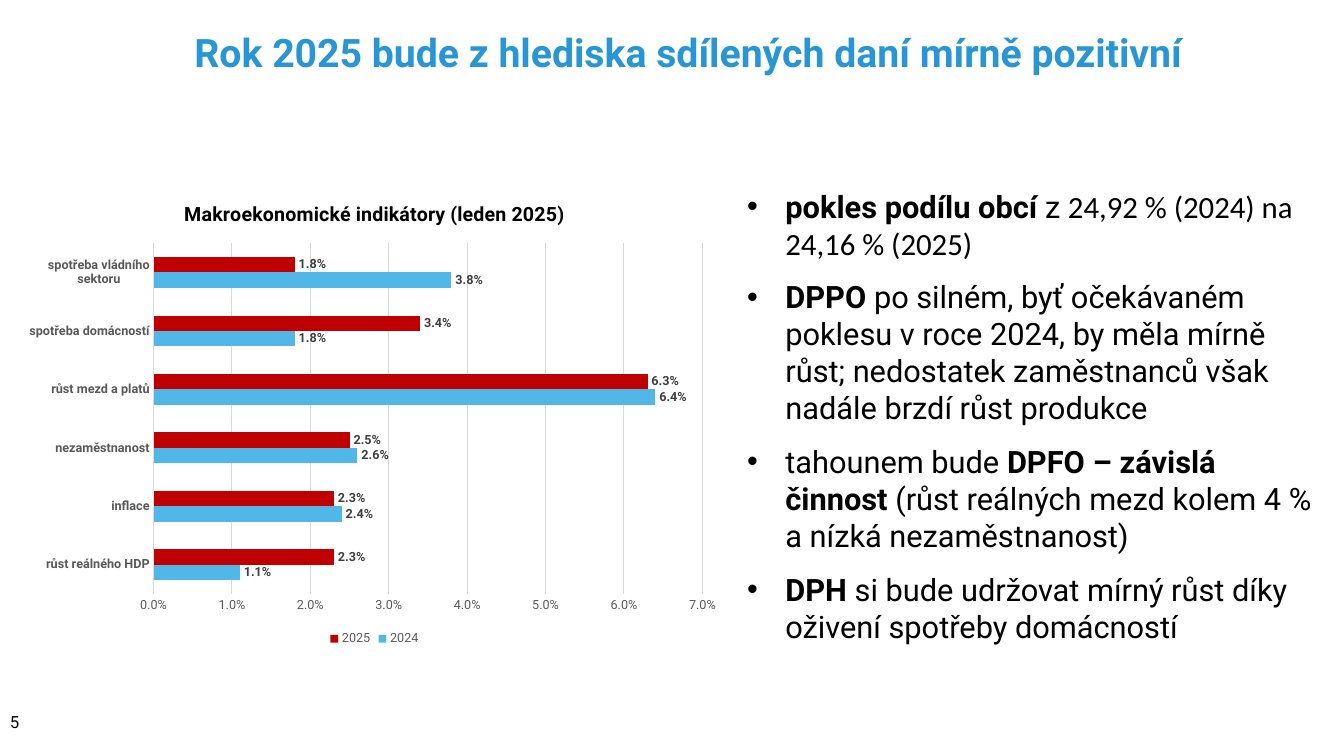
"""Build the slide on shared tax revenue in 2025 with its macroeconomic chart."""
from pptx import Presentation
from pptx.chart.data import CategoryChartData
from pptx.dml.color import RGBColor
from pptx.enum import chart as ch, text
from pptx.oxml import parse_xml
from pptx.oxml.ns import nsdecls
from pptx.util import Inches, Pt


def style(font, **values):
    color = values.pop("color", None)
    for name, value in values.items():
        setattr(font, name, value)
    if color:
        font.color.rgb = RGBColor.from_string(color)


prs = Presentation()
prs.slide_width, prs.slide_height = Inches(13.33), Inches(7.5)
s = prs.slides.add_slide(prs.slide_layouts[1])
title, body = s.placeholders
number = s.shapes.add_textbox(0, 0, 0, 0)

boxes = [
    (title, (0.92, 0.02, 11.81, 0.98), text.MSO_ANCHOR.MIDDLE),
    (body, (6.81, 1.81, 6.39, 4.68), text.MSO_ANCHOR.TOP),
    (number, (0, 6.95, 0.48, 0.43), text.MSO_ANCHOR.MIDDLE),
]
for sp, place, anchor in boxes:
    for name, value in zip(("left", "top", "width", "height"), place):
        setattr(sp, name, Inches(value))
    tf = sp.text_frame
    tf.word_wrap = True
    tf.auto_size = text.MSO_AUTO_SIZE.NONE
    tf.vertical_anchor = anchor
body.text_frame.auto_size = text.MSO_AUTO_SIZE.SHAPE_TO_FIT_TEXT

labels = [
    (title, "Rok 2025 bude z hlediska sdílených daní mírně pozitivní",
     dict(size=Pt(28), bold=True, color="2896D4")),
    (number, "5", dict(size=Pt(12), color="000000")),
]
for sp, words, look in labels:
    r = sp.text_frame.paragraphs[0].add_run()
    r.text = words
    style(r.font, name="Roboto", **look)
title.text_frame.paragraphs[0].alignment = text.PP_ALIGN.CENTER

bullets = [
    [("pokles podílu obcí ", True, "Roboto"), ("z ", False, "Roboto"),
     ("24,92 % (2024) na 24,16 % (2025)", False, "Calibri")],
    [("DPPO ", True, "Roboto"),
     ("po silném, byť očekávaném poklesu v roce 2024, by měla mírně růst; "
      "nedostatek zaměstnanců však nadále brzdí růst produkce", False, "Roboto")],
    [("tahounem bude ", False, "Roboto"), ("DPFO – závislá činnost", True, "Roboto"),
     (" (růst reálných mezd kolem 4 % a nízká nezaměstnanost)", False, "Roboto")],
    [("DPH ", True, "Roboto"),
     ("si bude udržovat mírný růst díky oživení spotřeby domácností", False, "Roboto")],
]
tf = body.text_frame
for i, runs in enumerate(bullets):
    p = tf.add_paragraph() if i else tf.paragraphs[0]
    p.level = 1
    p.space_before, p.space_after = Pt(0), Pt(12)
    pPr = p._p.get_or_add_pPr()
    pPr.set("marL", str(Inches(0.88)))
    pPr.set("indent", str(Inches(-0.38)))
    pPr.append(parse_xml(f'<a:buFont {nsdecls("a")} typeface="Arial"/>'))
    pPr.append(parse_xml(f'<a:buChar {nsdecls("a")} char="•"/>'))
    for words, bold, face in runs:
        r = p.add_run()
        r.text = words
        style(r.font, name=face, size=Pt(22), bold=bold, color="000000")

data = CategoryChartData(number_format="0.0%")
data.categories = ["růst reálného HDP", "inflace", "nezaměstnanost",
                   "růst mezd a platů", "spotřeba domácností",
                   "spotřeba vládního sektoru"]
data.add_series("2024", (0.011, 0.024, 0.026, 0.064, 0.018, 0.038))
data.add_series("2025", (0.023, 0.023, 0.025, 0.063, 0.034, 0.018))
chart = s.shapes.add_chart(ch.XL_CHART_TYPE.BAR_CLUSTERED, Inches(0.18), Inches(1.81),
                           Inches(7.07), Inches(4.64), data).chart
style(chart.font, name="Roboto", size=Pt(10), color="000000")
chart.has_title = True
p = chart.chart_title.text_frame.paragraphs[0]
r = p.add_run()
r.text = "Makroekonomické indikátory (leden 2025)"
style(r.font, name="Roboto", size=Pt(14), bold=True, color="000000")
chart.chart_title.include_in_layout = False

chart.has_legend = True
chart.legend.position = ch.XL_LEGEND_POSITION.BOTTOM
chart.legend.include_in_layout = False
style(chart.legend.font, name="Roboto", size=Pt(9), color="595959")

plot = chart.plots[0]
plot.gap_width, plot.overlap = 182, 0
plot.vary_by_categories = False
for series, color in zip(plot.series, ("51B7E9", "C00000")):
    series.format.fill.solid()
    series.format.fill.fore_color.rgb = RGBColor.from_string(color)
    dl = series.data_labels
    dl.show_value = True
    dl.position = ch.XL_LABEL_POSITION.OUTSIDE_END
    dl.number_format, dl.number_format_is_linked = "0.0%", False
    style(dl.font, name="Roboto", size=Pt(9), bold=True, color="404040")

cats, vals = chart.category_axis, chart.value_axis
for axis, bold in ((cats, True), (vals, False)):
    axis.major_tick_mark = axis.minor_tick_mark = ch.XL_TICK_MARK.NONE
    style(axis.tick_labels.font, name="Roboto", size=Pt(9), bold=bold, color="595959")
vals.minimum_scale, vals.maximum_scale, vals.major_unit = 0, 0.07, 0.01
vals.tick_labels.number_format = "0.0%"
vals.tick_labels.number_format_is_linked = False
vals.has_major_gridlines = True
vals.format.line.fill.background()
for line in (cats.format.line, vals.major_gridlines.format.line):
    line.color.rgb = RGBColor.from_string("D9D9D9")
    line.width = Pt(0.75)

area = chart._chartSpace.chart.plotArea
for layout in area.findall("{*}layout"):
    area.remove(layout)
spots = "".join(f'<c:{k} val="{v}"/>' for k, v in (
    ("layoutTarget", "inner"), ("xMode", "edge"), ("yMode", "edge"),
    ("x", 0.19), ("y", 0.13), ("w", 0.77), ("h", 0.75)))
area.insert(0, parse_xml(f'<c:layout {nsdecls("c")}><c:manualLayout>{spots}'
                         "</c:manualLayout></c:layout>"))

prs.save("out.pptx")
